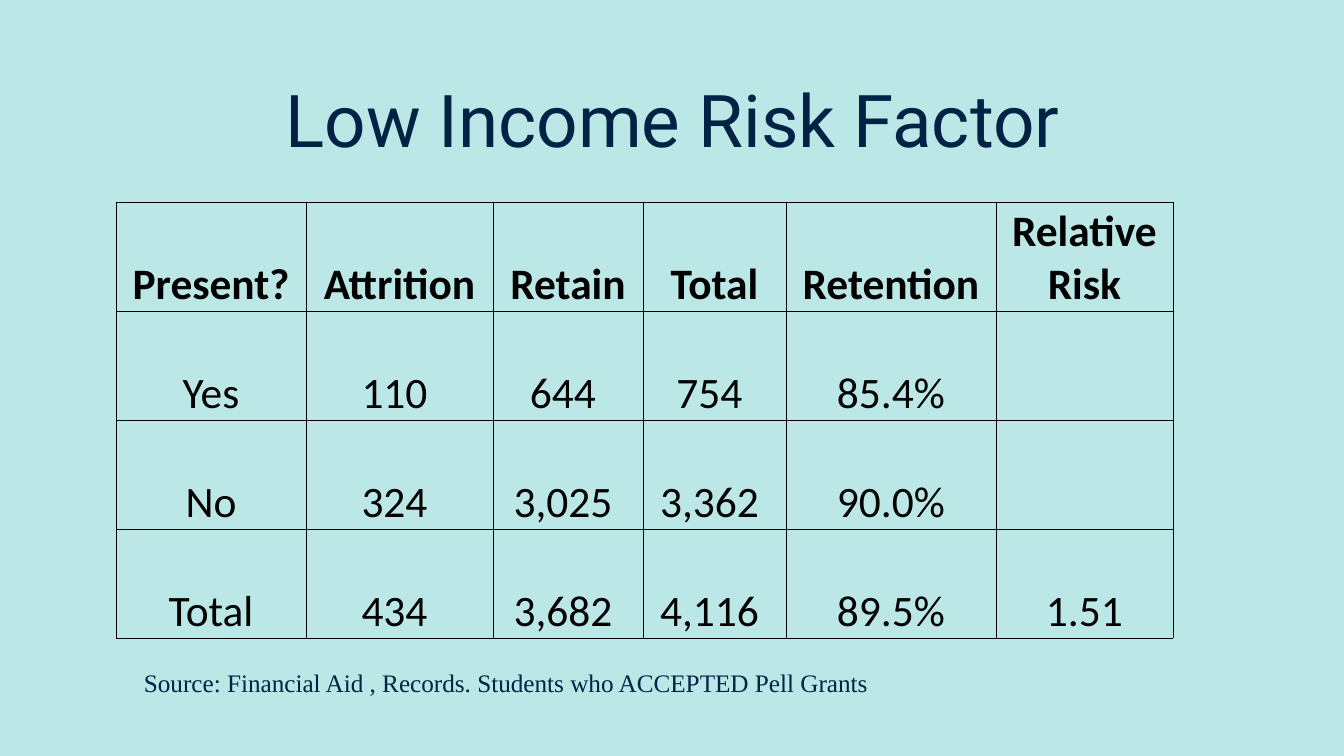
from lxml.etree import SubElement
from pptx import Presentation
from pptx.dml.color import RGBColor
from pptx.enum.text import MSO_ANCHOR, PP_ALIGN
from pptx.oxml.ns import qn
from pptx.util import Pt

BACKGROUND = RGBColor(0xBB, 0xE7, 0xE6)
NAVY = RGBColor(0x00, 0x22, 0x44)
BLACK = RGBColor(0x00, 0x00, 0x00)

COLUMN_WIDTHS = [190, 187, 150, 143, 210, 177]
ROW_HEIGHT = 109
COUNT_COLUMNS = (1, 2, 3)
ROWS = [
    ["Present?", "Attrition", "Retain", "Total", "Retention", "Relative Risk"],
    ["Yes", "110", "644", "754", "85.4%", ""],
    ["No", "324", "3,025", "3,362", "90.0%", ""],
    ["Total", "434", "3,682", "4,116", "89.5%", "1.51"],
]


def px(n):
    return round(n * 914400 / 100.8)


class SlideBuilder:
    """Draws styled text and ruled tables on one slide, measured in px."""

    def __init__(self, prs):
        self.s = prs.slides.add_slide(prs.slide_layouts[6])
        fill = self.s.background.fill
        fill.solid()
        fill.fore_color.rgb = BACKGROUND

    def style(self, p, font, size, color, bold=False):
        p.font.name = font
        p.font.size = Pt(size)
        p.font.color.rgb = color
        p.font.bold = bold

    def text(self, text, x, y, w, h, font, size, align=PP_ALIGN.LEFT,
             anchor=MSO_ANCHOR.TOP, spacing=1.0):
        sp = self.s.shapes.add_textbox(px(x), px(y), px(w), px(h))
        tf = sp.text_frame
        tf.word_wrap = True
        tf.vertical_anchor = anchor
        p = tf.paragraphs[0]
        p.text = text
        p.alignment = align
        p.line_spacing = spacing
        self.style(p, font, size, NAVY)

    def border(self, cell):
        tcPr = cell._tc.get_or_add_tcPr()
        for side in ("lnL", "lnR", "lnT", "lnB"):
            ln = SubElement(tcPr, qn(f"a:{side}"), w=str(Pt(0.5)))
            fill = SubElement(ln, qn("a:solidFill"))
            SubElement(fill, qn("a:srgbClr"), val=str(BLACK))

    def table(self, rows, x, y, widths, row_height):
        table = self.s.shapes.add_table(
            len(rows), len(widths), px(x), px(y),
            px(sum(widths)), px(row_height * len(rows))).table
        table.first_row = table.horz_banding = False
        for column, width in zip(table.columns, widths):
            column.width = px(width)
        for i, row in enumerate(rows):
            table.rows[i].height = px(row_height)
            for j, text in enumerate(row):
                cell = table.cell(i, j)
                self.border(cell)
                cell.fill.background()
                cell.vertical_anchor = MSO_ANCHOR.BOTTOM
                cell.margin_left = cell.margin_top = px(3)
                cell.margin_right = px(13 if i and j in COUNT_COLUMNS else 3)
                cell.margin_bottom = 0
                p = cell.text_frame.paragraphs[0]
                p.text = text
                p.alignment = PP_ALIGN.CENTER
                self.style(p, "Calibri", 31, BLACK, bold=i == 0)


def main():
    prs = Presentation()
    prs.slide_width, prs.slide_height = px(1344), px(756)
    slide = SlideBuilder(prs)
    slide.text("Low Income Risk Factor", 93, 61, 1159, 125, "Roboto", 52,
               PP_ALIGN.CENTER, MSO_ANCHOR.MIDDLE, 0.9)
    slide.table(ROWS, 116, 202, COLUMN_WIDTHS, ROW_HEIGHT)
    slide.text("Source: Financial Aid , Records. Students who ACCEPTED Pell Grants",
               134, 662, 1006, 40, "Times New Roman", 18)
    prs.save("out.pptx")


if __name__ == "__main__":
    main()
